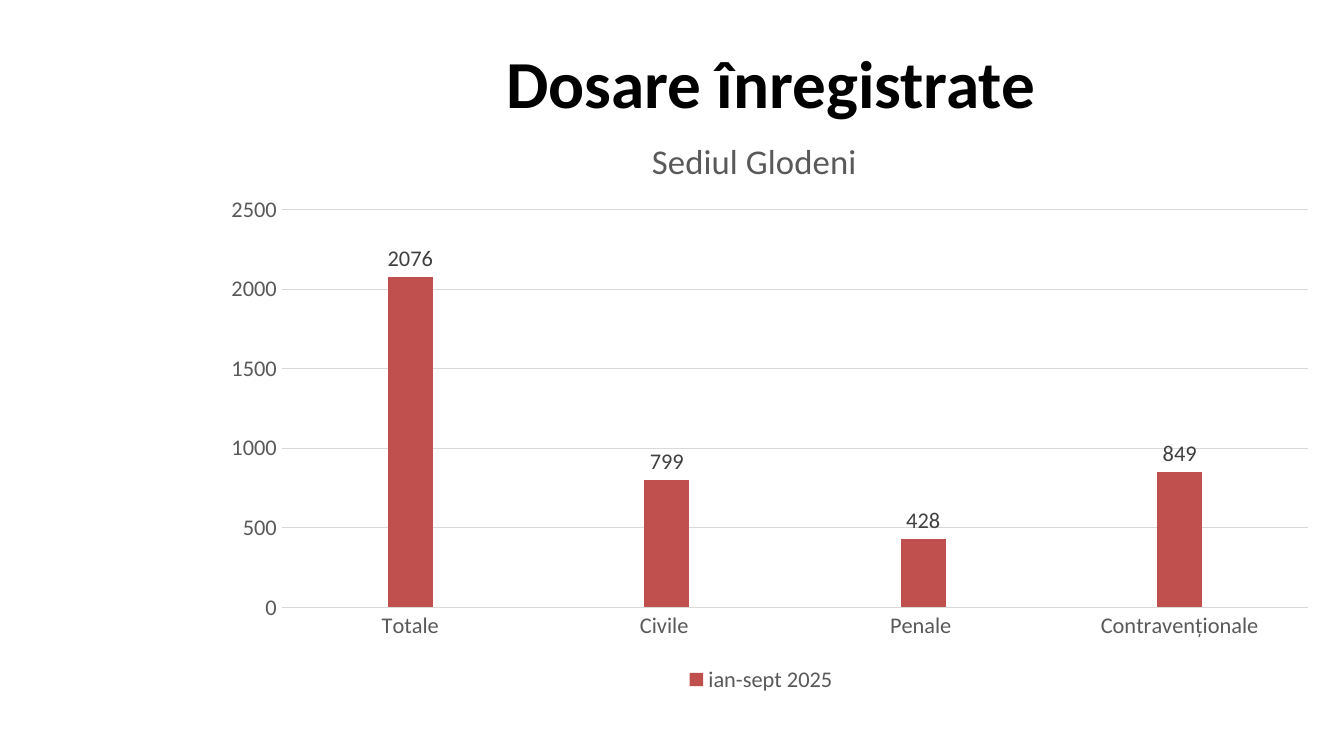
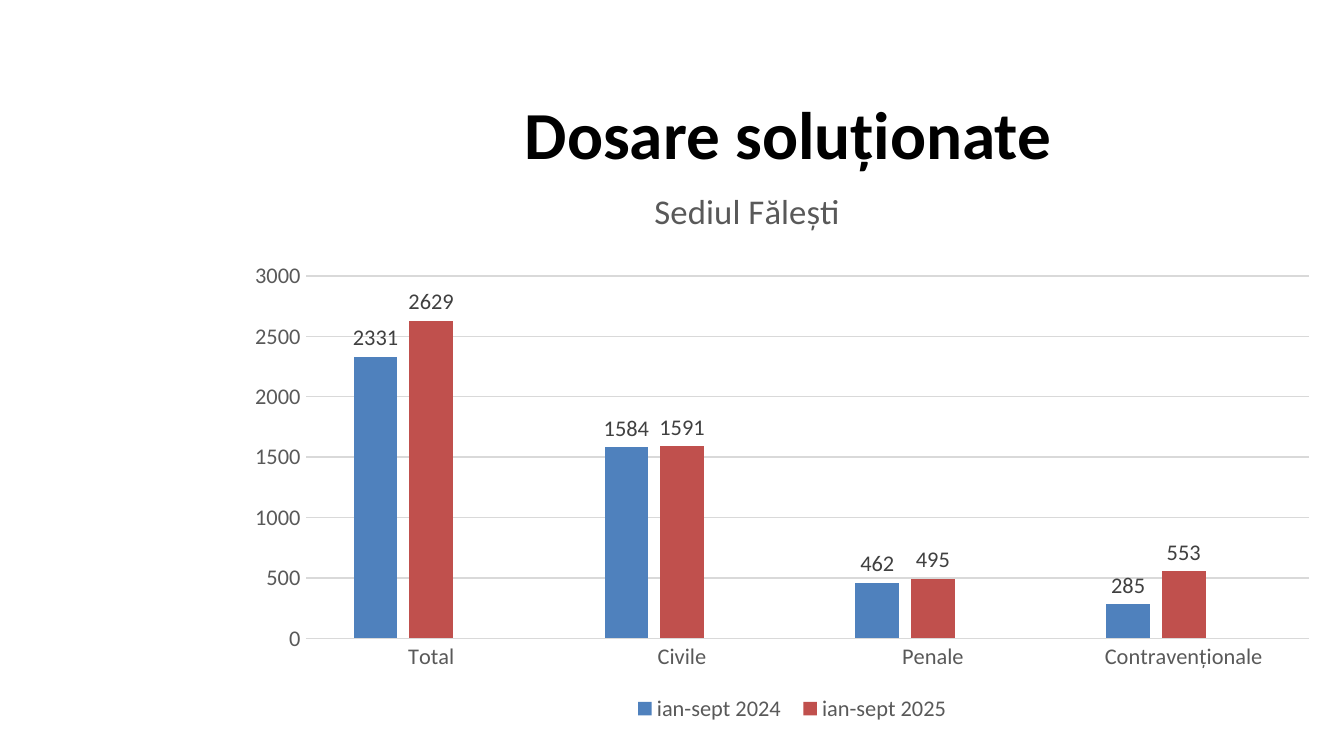
"""Build two slides of court case counts, each with a title and a column chart."""
from dataclasses import dataclass
from typing import Optional

from lxml.etree import SubElement
from pptx import Presentation
from pptx.chart.chart import Chart
from pptx.chart.data import CategoryChartData as Data
from pptx.dml.color import RGBColor
from pptx.enum.chart import XL_CHART_TYPE as Kind, XL_LABEL_POSITION as Spot
from pptx.enum.chart import XL_LEGEND_POSITION as Side, XL_TICK_MARK as Tick
from pptx.enum.text import MSO_ANCHOR as Anchor, MSO_AUTO_SIZE as Fit, PP_ALIGN as Align
from pptx.oxml.ns import qn
from pptx.slide import Slide
from pptx.text.text import Font
from pptx.util import Inches, Pt

FACE = "Calibri"
BLACK = RGBColor(0x00, 0x00, 0x00)
GRAY = RGBColor(0x59, 0x59, 0x59)
DARK = RGBColor(0x40, 0x40, 0x40)
PALE = RGBColor(0xD9, 0xD9, 0xD9)
BLUE = RGBColor(0x4F, 0x81, 0xBD)
RED = RGBColor(0xC0, 0x50, 0x4D)
GREEN = RGBColor(0x9B, 0xBB, 0x59)
NONE = (None,) * 4


@dataclass(frozen=True)
class Box:
    left: float
    top: float
    width: float
    height: float


@dataclass(frozen=True)
class Row:
    name: str
    vals: tuple[Optional[int], ...]
    color: RGBColor


@dataclass(frozen=True)
class Page:
    title: str
    head: Box
    inset: float
    seat: str
    seat_at: tuple[float, float]
    frame: Box
    plot: Box
    key: Box
    cats: tuple[str, ...]
    rows: tuple[Row, ...]


REST = Row("Series 3", NONE, GREEN)
PAGES = (
    Page("Dosare înregistrate", Box(1.97, 0.25, 7.53, 0.71), 0.1,
         "Sediul Glodeni", (0.391, 0.023),
         Box(1.57, 0.87, 8.27, 4.43), Box(0.064, 0.156, 0.923, 0.668),
         Box(0.42, 0.91, 0.15, 0.07),
         ("Totale", "Civile ", "Penale ", "Contravenționale"),
         (Row("Series 1", NONE, BLUE),
          Row("ian-sept 2025", (2076, 799, 428, 849), RED), REST)),
    Page("Dosare soluționate", Box(1.37, 0.63, 7.97, 0.71), 1.12,
         "Sediul Fălești", (0.412, 0.033),
         Box(1.37, 1.2, 8.38, 4.31), Box(0.108, 0.198, 0.891, 0.626),
         Box(0.39, 0.91, 0.3, 0.07),
         ("Total", "Civile", "Penale", "Contravenționale"),
         (Row("ian-sept 2024", (2331, 1584, 462, 285), BLUE),
          Row("ian-sept 2025", (2629, 1591, 495, 553), RED), REST)),
)


def style(font: Font, size: float, color: RGBColor, bold: bool = False) -> None:
    """Set face, size, colour and weight."""
    font.name, font.size, font.bold = FACE, Pt(size), bold
    font.color.rgb = color


def place(chart: Chart, tag: str, index: int, **parts: float) -> None:
    """Give a chart part a fixed place, in shares of the chart."""
    base = chart.element.find(".//" + qn(tag))
    old = base.find(qn("c:layout"))
    if old is not None:
        base.remove(old)
    outer = SubElement(base, qn("c:layout"))
    base.insert(index, outer)
    inner = SubElement(outer, qn("c:manualLayout"))
    if tag == "c:plotArea":
        SubElement(inner, qn("c:layoutTarget")).set("val", "inner")
    for key in ("x", "y"):
        SubElement(inner, qn(f"c:{key}Mode")).set("val", "edge")
    for key, val in parts.items():
        SubElement(inner, qn(f"c:{key}")).set("val", str(val))


def place_box(chart: Chart, tag: str, index: int, box: Box) -> None:
    """Give a chart part a fixed place and size."""
    place(chart, tag, index, x=box.left, y=box.top, w=box.width, h=box.height)


def add_title(slide: Slide, page: Page) -> None:
    """Fill and move the title."""
    shape, head = slide.shapes.title, page.head
    shape.left, shape.top = Inches(head.left), Inches(head.top)
    shape.width, shape.height = Inches(head.width), Inches(head.height)
    frame = shape.text_frame
    frame.text = page.title
    frame.word_wrap = True
    frame.auto_size = Fit.SHAPE_TO_FIT_TEXT
    frame.vertical_anchor = Anchor.MIDDLE
    frame.margin_left = Inches(page.inset)
    para = frame.paragraphs[0]
    para.alignment = Align.CENTER
    style(para.runs[0].font, 36, BLACK, True)


def set_axes(chart: Chart) -> None:
    """Style both axes and the grid."""
    for axis in (chart.category_axis, chart.value_axis):
        axis.major_tick_mark = axis.minor_tick_mark = Tick.NONE
        style(axis.tick_labels.font, 12, GRAY)
    chart.value_axis.format.line.fill.background()
    chart.value_axis.has_major_gridlines = True
    for part in (chart.category_axis, chart.value_axis.major_gridlines):
        part.format.line.color.rgb = PALE
        part.format.line.width = Pt(0.75)


def set_legend(chart: Chart, page: Page) -> None:
    """Put the legend below and leave out the empty rows."""
    chart.has_legend = True
    legend = chart.legend
    legend.position = Side.BOTTOM
    legend.include_in_layout = False
    style(legend.font, 12, GRAY)
    root = chart.element.find(".//" + qn("c:legend"))
    empty = [i for i, row in enumerate(page.rows) if row.vals == NONE]
    for slot, index in enumerate(empty, 1):
        entry = SubElement(root, qn("c:legendEntry"))
        root.insert(slot, entry)
        SubElement(entry, qn("c:idx")).set("val", str(index))
        SubElement(entry, qn("c:delete")).set("val", "1")
    place_box(chart, "c:legend", len(empty) + 1, page.key)


def add_chart(slide: Slide, page: Page) -> None:
    """Draw the column chart."""
    data = Data()
    data.categories = page.cats
    for row in page.rows:
        data.add_series(row.name, row.vals)
    box = page.frame
    chart = slide.shapes.add_chart(
        Kind.COLUMN_CLUSTERED, Inches(box.left), Inches(box.top),
        Inches(box.width), Inches(box.height), data).chart
    style(chart.font, 10, BLACK)
    chart.has_title = True
    frame = chart.chart_title.text_frame
    frame.text = page.seat
    style(frame.paragraphs[0].runs[0].font, 18.6, GRAY)
    place(chart, "c:title", 1, x=page.seat_at[0], y=page.seat_at[1])
    place_box(chart, "c:plotArea", 0, page.plot)
    set_axes(chart)
    set_legend(chart, page)
    plot = chart.plots[0]
    plot.gap_width, plot.overlap, plot.vary_by_categories = 219, -27, False
    for row, line in zip(page.rows, plot.series):
        line.format.fill.solid()
        line.format.fill.fore_color.rgb = row.color
        labels = line.data_labels
        labels.show_value = True
        labels.position = Spot.OUTSIDE_END
        style(labels.font, 12, DARK)


def main() -> None:
    """Build and save the deck."""
    deck = Presentation()
    deck.slide_width = Inches(10)
    deck.slide_height = Inches(10 * 9 / 16)
    for page in PAGES:
        slide = deck.slides.add_slide(deck.slide_layouts[5])
        add_title(slide, page)
        add_chart(slide, page)
    deck.save("out.pptx")


if __name__ == "__main__":
    main()
